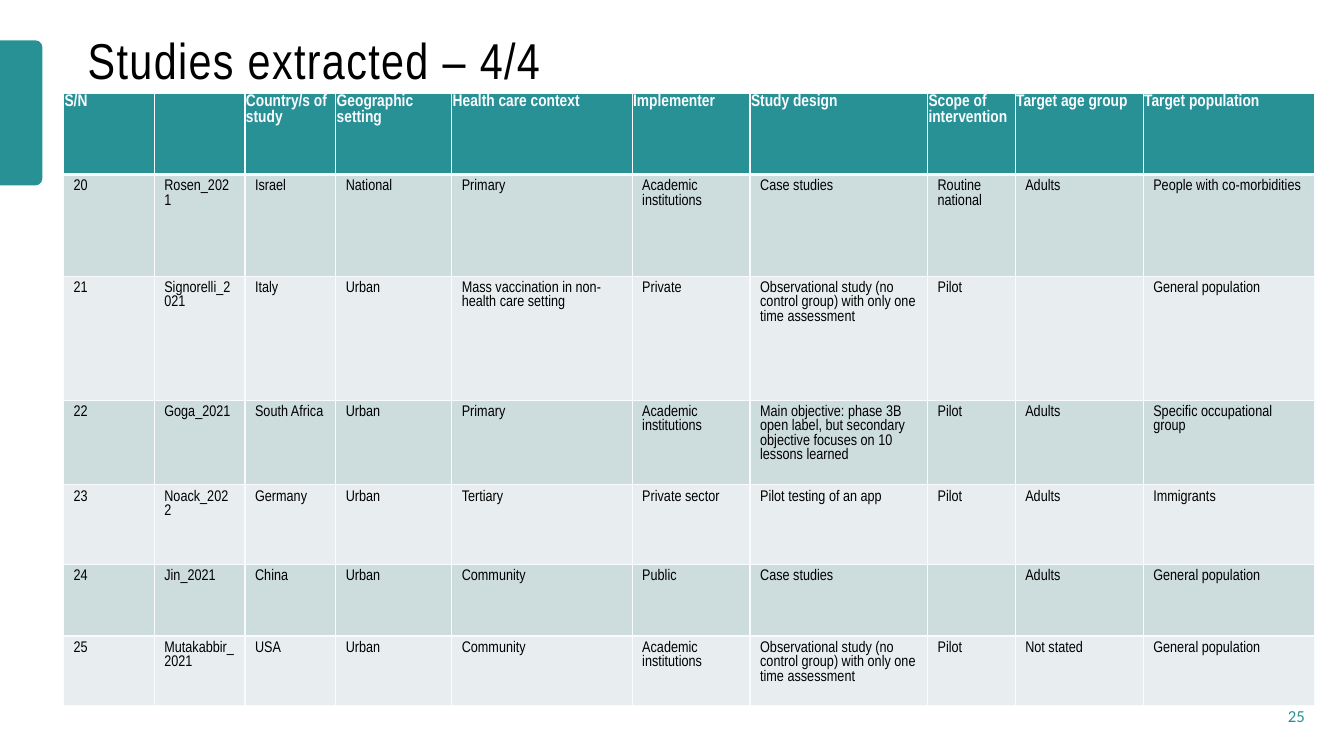
from dataclasses import dataclass

from lxml import etree
from pptx import Presentation
from pptx.dml.color import RGBColor
from pptx.enum.shapes import MSO_SHAPE
from pptx.enum.text import MSO_ANCHOR, PP_ALIGN
from pptx.oxml.ns import qn
from pptx.util import Pt

TAB_SHAPE = MSO_SHAPE.ROUND_2_SAME_RECTANGLE
MIDDLE = MSO_ANCHOR.MIDDLE
LEFT, RIGHT = PP_ALIGN.LEFT, PP_ALIGN.RIGHT

TITLE = "Studies extracted – 4/4"
PAGE = "25"
HEADER = ["S/N", "", "Country/s of study", "Geographic setting", "Health care context",
          "Implementer", "Study design", "Scope of intervention", "Target age group",
          "Target population"]
OBSERVATIONAL = "Observational study (no control group) with only one time assessment"
STUDIES = [
    ["20", "Rosen_2021", "Israel", "National", "Primary", "Academic institutions",
     "Case studies", "Routine national", "Adults", "People with co-morbidities"],
    ["21", "Signorelli_2021", "Italy", "Urban", "Mass vaccination in non-health care setting",
     "Private", OBSERVATIONAL, "Pilot", "", "General population"],
    ["22", "Goga_2021", "South Africa", "Urban", "Primary", "Academic institutions",
     "Main objective: phase 3B open label, but secondary objective focuses on 10 lessons learned",
     "Pilot", "Adults", "Specific occupational group"],
    ["23", "Noack_2022", "Germany", "Urban", "Tertiary", "Private sector",
     "Pilot testing of an app", "Pilot", "Adults", "Immigrants"],
    ["24", "Jin_2021", "China", "Urban", "Community", "Public",
     "Case studies", "", "Adults", "General population"],
    ["25", "Mutakabbir_2021", "USA", "Urban", "Community", "Academic institutions",
     OBSERVATIONAL, "Pilot", "Not stated", "General population"],
]
COL_WIDTHS = [90, 90, 90, 115, 179, 117, 176, 87, 127, 170]
ROW_HEIGHTS = [80, 101, 123, 84, 79, 71, 69]


@dataclass(frozen=True)
class Theme:
    teal: str = "289195"
    band_dark: str = "CDDCDD"
    band_light: str = "E8EEEF"
    rule: str = "FAFBFF"
    ink: str = "000000"
    font: str = "Arial Narrow"
    page_font: str = "Calibri"
    title_size: int = 36
    header_size: int = 12
    body_size: int = 11
    page_size: int = 12


THEME = Theme()


def px(n):
    return n * 9144


def box(*lengths):
    return [px(n) for n in lengths]


def style(p, name, size, color, bold=False, align=LEFT):
    p.alignment = align
    for font in [p.font] + [r.font for r in p.runs]:
        font.name, font.size, font.bold = name, Pt(size), bold
        font.color.rgb = RGBColor.from_string(color)


def add_borders(cell, widths):
    tcPr = cell._tc.get_or_add_tcPr()
    for i, (side, width) in enumerate(widths.items()):
        ln = etree.Element(qn(f"a:ln{side}"), w=str(Pt(width)))
        fill = etree.SubElement(ln, qn("a:solidFill"))
        etree.SubElement(fill, qn("a:srgbClr"), val=THEME.rule)
        tcPr.insert(i, ln)


def add_title(s):
    title = s.shapes.title
    title.left, title.top, title.width, title.height = box(77, -10, 1150, 145)
    tf = title.text_frame
    tf.text = TITLE
    tf.vertical_anchor = MIDDLE
    p = tf.paragraphs[0]
    p.line_spacing = 0.9
    style(p, THEME.font, THEME.title_size, THEME.ink)
    p.runs[0].font._element.set("spc", "100")


def add_side_tab(s):
    tab = s.shapes.add_shape(TAB_SHAPE, *box(-51, 91, 144, 42))
    tab.rotation = 90
    tab.shadow.inherit = False
    tab.fill.solid()
    tab.fill.fore_color.rgb = RGBColor.from_string(THEME.teal)
    tab.line.fill.background()


def add_page_number(s):
    tf = s.shapes.add_textbox(*box(1227, 690, 77, 40)).text_frame
    tf.word_wrap = True
    tf.vertical_anchor = MIDDLE
    tf.text = PAGE
    style(tf.paragraphs[0], THEME.page_font, THEME.page_size, THEME.teal, align=RIGHT)


def add_studies(s):
    rows = [HEADER] + STUDIES
    frame = s.shapes.add_table(len(rows), len(HEADER),
                               *box(63, 93, sum(COL_WIDTHS), sum(ROW_HEIGHTS)))
    table = frame.table
    for col, width in zip(table.columns, COL_WIDTHS):
        col.width = px(width)
    for row, height in zip(table.rows, ROW_HEIGHTS):
        row.height = px(height)
    for i, row in enumerate(rows):
        is_header = i == 0
        band = THEME.teal if is_header else (THEME.band_dark if i % 2 else THEME.band_light)
        borders = {"L": 1, "R": 1, "T": 3 if i == 1 else 1, "B": 3 if is_header else 1}
        for j, text in enumerate(row):
            cell = table.cell(i, j)
            cell.text = text
            cell.fill.solid()
            cell.fill.fore_color.rgb = RGBColor.from_string(band)
            add_borders(cell, borders)
            p = cell.text_frame.paragraphs[0]
            if is_header:
                cell.margin_left = cell.margin_right = cell.margin_top = px(1)
                style(p, THEME.font, THEME.header_size, THEME.rule, bold=True)
            else:
                style(p, THEME.font, THEME.body_size, THEME.ink)


def main():
    prs = Presentation()
    prs.slide_width, prs.slide_height = box(1333, 750)
    s = prs.slides.add_slide(prs.slide_layouts[5])
    add_side_tab(s)
    add_title(s)
    add_page_number(s)
    add_studies(s)
    prs.save("out.pptx")


if __name__ == "__main__":
    main()
